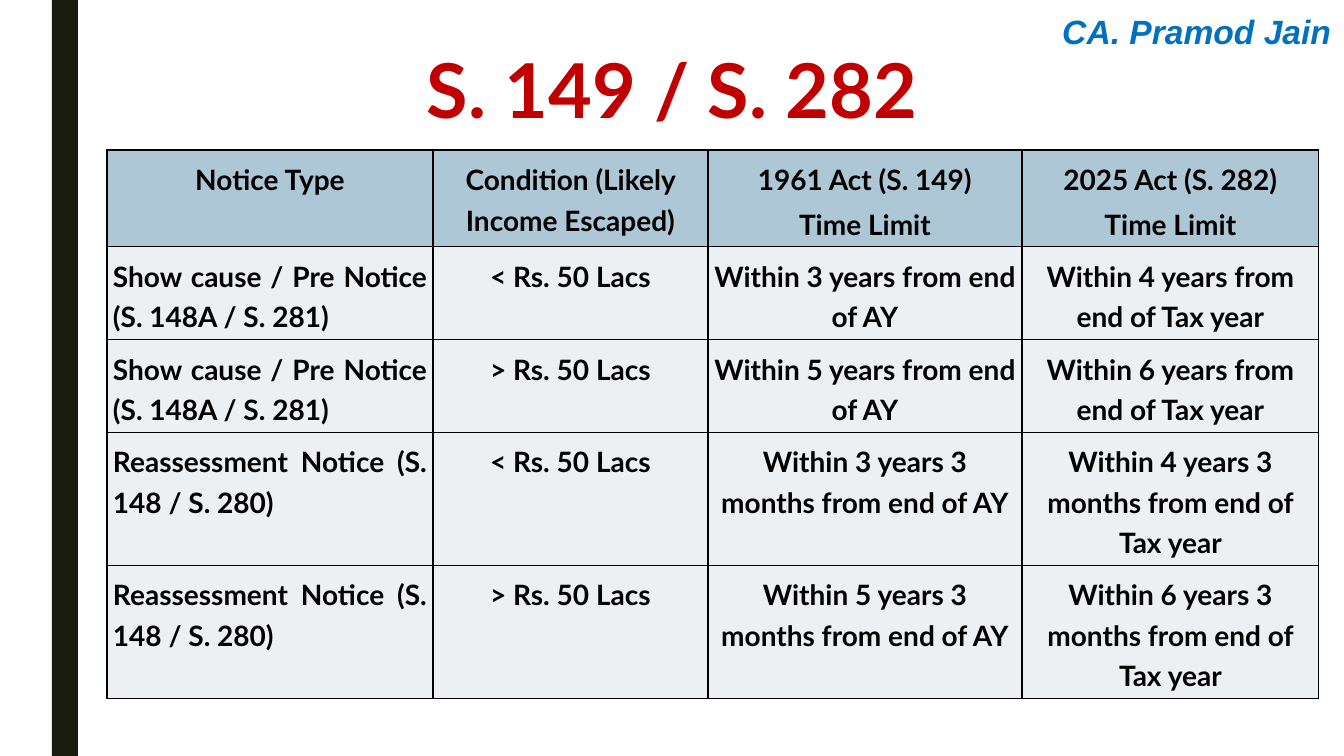
from lxml import etree
from pptx import Presentation, util as u
from pptx.dml.color import RGBColor
from pptx.enum import shapes, text
from pptx.oxml.ns import qn

PX = 914400 / 100.8
COLORS = {"bar": "191B0E", "author": "0070C0", "title": "C00000", "ink": "000000",
          "head": "ADC7D6", "body": "ECF0F3"}
AL = text.PP_ALIGN
COLS = [326, 275, 314, 297]
ROWS = [82, 82, 82, 133, 133]
SHOW_CAUSE = "Show cause / Pre Notice (S. 148A / S. 281)"
REASSESSMENT = "Reassessment Notice (S. 148 / S. 280)"
CELLS = [
    ["Notice Type", "Condition (Likely Income Escaped)",
     "1961 Act (S. 149)\nTime Limit", "2025 Act (S. 282)\nTime Limit"],
    [SHOW_CAUSE, "< Rs. 50 Lacs",
     "Within 3 years from end of AY", "Within 4 years from end of Tax year"],
    [SHOW_CAUSE, "> Rs. 50 Lacs",
     "Within 5 years from end of AY", "Within 6 years from end of Tax year"],
    [REASSESSMENT, "< Rs. 50 Lacs",
     "Within 3 years 3 months from end of AY", "Within 4 years 3 months from end of Tax year"],
    [REASSESSMENT, "> Rs. 50 Lacs",
     "Within 5 years 3 months from end of AY", "Within 6 years 3 months from end of Tax year"],
]


def px(*values):
    """Turn pixel lengths into EMU."""
    return [round(v * PX) for v in values]


def rgb(name):
    """Look up a named colour."""
    return RGBColor.from_string(COLORS[name])


def fill_solid(obj, color):
    """Give a shape or cell a plain fill."""
    obj.fill.solid()
    obj.fill.fore_color.rgb = rgb(color)


def write(tf, content, color, para, font):
    """Write one paragraph per line with the given formats."""
    tf.text = content
    for p in tf.paragraphs:
        for key, value in para.items():
            setattr(p, key, value)
        for r in p.runs:
            for key, value in font.items():
                setattr(r.font, key, value)
            r.font.color.rgb = rgb(color)


def side_bar(s, box):
    """Draw the dark vertical bar."""
    sp = s.shapes.add_shape(shapes.MSO_SHAPE.RECTANGLE, *px(*box))
    sp.shadow.inherit = False
    fill_solid(sp, "bar")
    sp.line.fill.background()


def text_line(s, box, content, color, align, anchor, font):
    """Place a single line of text in its box."""
    tf = s.shapes.add_textbox(*px(*box)).text_frame
    tf.word_wrap = True
    tf.vertical_anchor = anchor
    write(tf, content, color, {"alignment": align}, font)


def add_borders(cell):
    """Outline all four sides of a cell."""
    pr = cell._tc.get_or_add_tcPr()
    for i, side in enumerate(("lnL", "lnR", "lnT", "lnB")):
        ln = etree.Element(qn("a:" + side), w=str(u.Pt(1)))
        fill = etree.SubElement(ln, qn("a:solidFill"))
        etree.SubElement(fill, qn("a:srgbClr"), val=COLORS["ink"])
        pr.insert(i, ln)


def limits_table(s, box):
    """Build the table of notice time limits."""
    tbl = s.shapes.add_table(len(ROWS), len(COLS), *px(*box)).table
    for col, width in zip(tbl.columns, px(*COLS)):
        col.width = width
    for row, height in zip(tbl.rows, px(*ROWS)):
        row.height = height
    margin = px(6)[0]
    for i, line in enumerate(CELLS):
        for j, content in enumerate(line):
            cell = tbl.cell(i, j)
            for side in ("left", "right", "top", "bottom"):
                setattr(cell, "margin_" + side, margin)
            fill_solid(cell, "body" if i else "head")
            add_borders(cell)
            para = {"alignment": AL.JUSTIFY if i and not j else AL.CENTER,
                    "line_spacing": 1.2, "space_after": u.Pt(3)}
            write(cell.text_frame, content, "ink", para,
                  {"name": "Lato", "size": u.Pt(20), "bold": True})


def main():
    """Build and save the slide."""
    prs = Presentation()
    prs.slide_width, prs.slide_height = px(1344, 756)
    s = prs.slides.add_slide(prs.slide_layouts[6])
    side_bar(s, (52, 0, 26, 756))
    text_line(s, (996, 6, 345, 42), "CA. Pramod Jain", "author", AL.RIGHT, text.MSO_ANCHOR.TOP,
              {"name": "Arial", "size": u.Pt(24), "bold": True, "italic": True})
    text_line(s, (168, 42, 1008, 93), "S. 149 / S. 282", "title", AL.CENTER, text.MSO_ANCHOR.MIDDLE,
              {"name": "Lato", "size": u.Pt(54), "bold": True})
    limits_table(s, (107, 150, sum(COLS), sum(ROWS)))
    prs.save("out.pptx")


if __name__ == "__main__":
    main()
